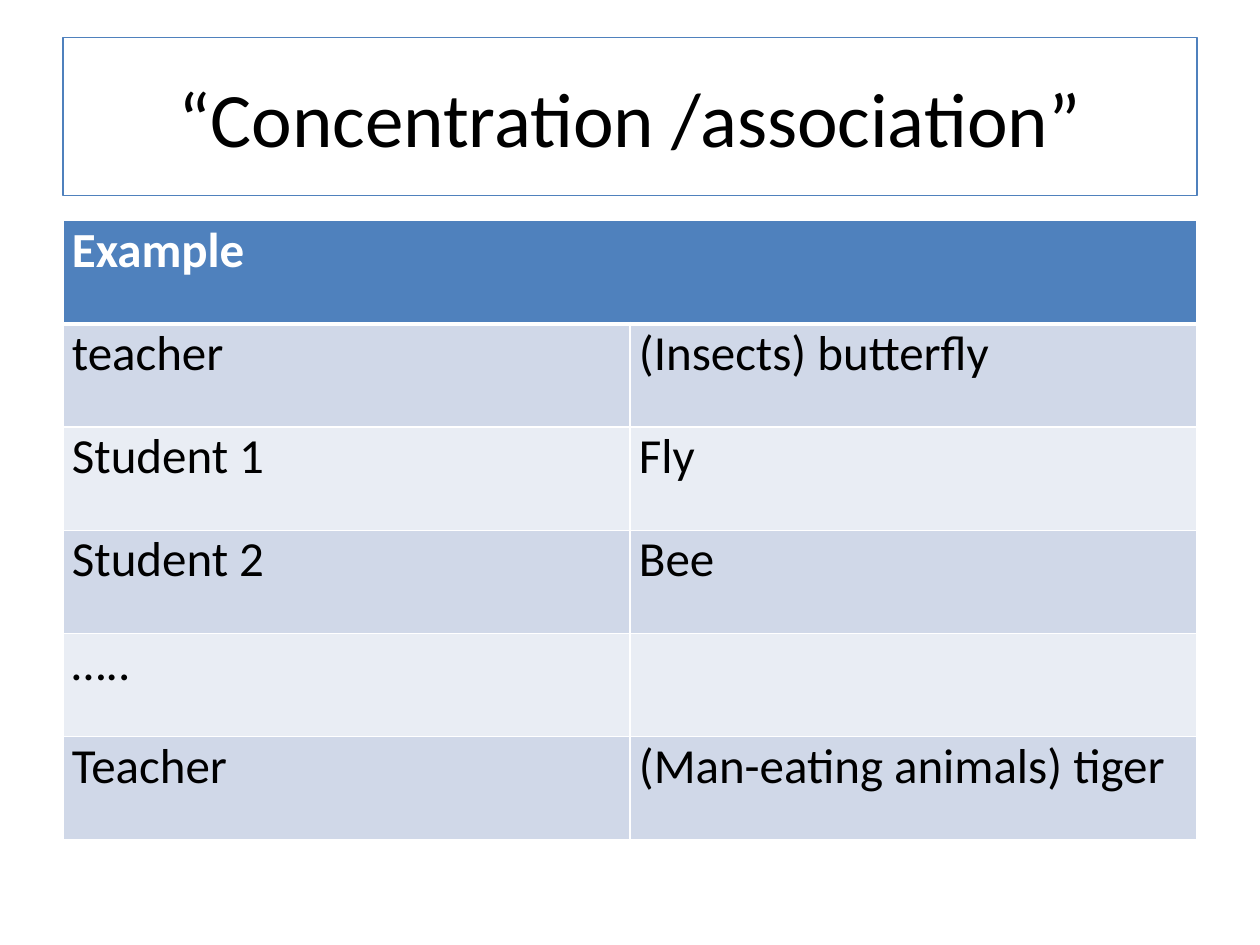
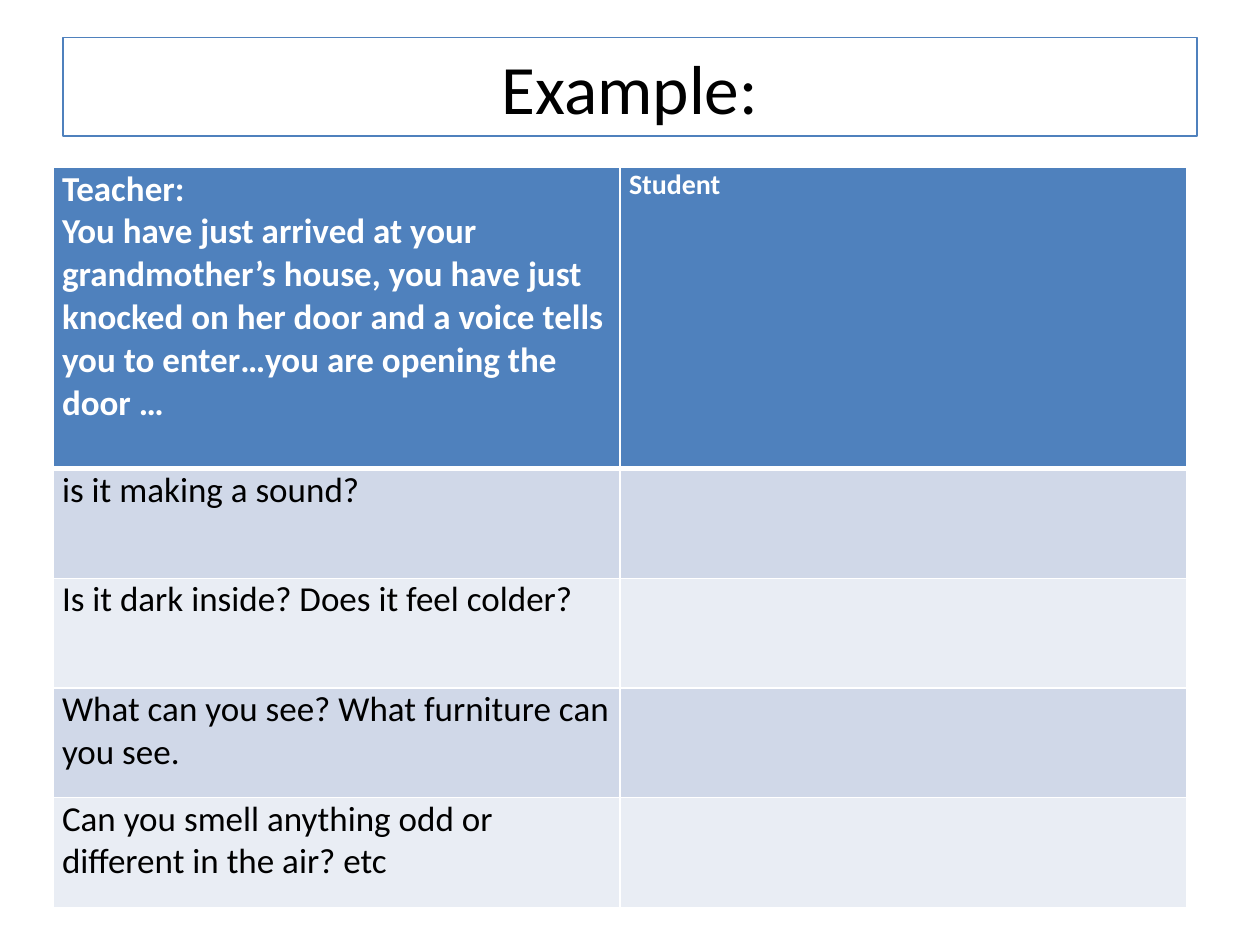
from dataclasses import dataclass

from lxml.etree import SubElement
from pptx import Presentation
from pptx.dml.color import RGBColor
from pptx.enum.text import MSO_ANCHOR as Anchor, MSO_AUTO_SIZE as AutoSize, PP_ALIGN as Align
from pptx.oxml.ns import qn
from pptx.util import Cm, Pt

FONT = "Calibri"
BLACK, WHITE, BLUE = "000000", "FFFFFF", "4F81BD"
BANDS = ("D0D8E8", "E9EDF4")
TITLE_LAYOUT = 5
CONTENT_LEFT, CONTENT_WIDTH = 1.27, 22.86
TITLE_TOP = 0.76
THIN_BORDER, HEADER_BORDER = 1, 3
CELL_FORMAT = {
    "margin_left": Cm(0.18),
    "margin_right": Cm(0.18),
    "margin_top": 0,
    "margin_bottom": 0,
    "vertical_anchor": Anchor.TOP,
}


@dataclass
class Entry:
    text: str
    size: float


@dataclass
class TableSlide:
    title: Entry
    title_height: float
    left: float
    top: float
    header_height: float
    row_height: float
    rows: list[list[Entry]]
    merge_header: bool = False


def big(text: str) -> Entry:
    return Entry(text, 28)


def question(text: str) -> list[Entry]:
    return [Entry(text, 20), Entry("", 20)]


SLIDES = [
    TableSlide(
        title=Entry("“Concentration /association”", 44),
        title_height=3.18,
        left=CONTENT_LEFT,
        top=4.45,
        header_height=2.08,
        row_height=2.08,
        merge_header=True,
        rows=[
            [big("Example"), big("")],
            [big("teacher"), big("(Insects) butterfly")],
            [big("Student 1"), big("Fly")],
            [big("Student 2"), big("Bee")],
            [big("….."), big("")],
            [big("Teacher"), big("(Man-eating animals) tiger")],
        ],
    ),
    TableSlide(
        title=Entry("Example:", 39.6),
        title_height=1.98,
        left=1.07,
        top=3.38,
        header_height=6.07,
        row_height=2.21,
        rows=[
            [
                Entry(
                    "Teacher:\nYou have just arrived at your grandmother’s house, "
                    "you have just knocked on her door and a voice tells you to "
                    "enter…you are opening the door …",
                    20,
                ),
                Entry("Student", 16),
            ],
            question("is it making a sound?"),
            question("Is it dark inside? Does it feel colder?"),
            question("What can you see? What furniture can you see."),
            question("Can you smell anything odd or different in the air? etc"),
        ],
    ),
]


def color(value: str) -> RGBColor:
    return RGBColor.from_string(value)


def apply_format(target, values: dict) -> None:
    for name, value in values.items():
        setattr(target, name, value)


def write_text(frame, entry: Entry, ink: str, bold: bool, align=Align.LEFT) -> None:
    frame.text = entry.text
    for para in frame.paragraphs:
        para.alignment = align
        apply_format(para.font, {"size": Pt(entry.size), "name": FONT})
        for span in para.runs:
            apply_format(span.font, {"size": Pt(entry.size), "name": FONT, "bold": bold})
            span.font.color.rgb = color(ink)


def add_title(page, item: TableSlide) -> None:
    box = page.shapes.title
    apply_format(box, {
        "left": Cm(CONTENT_LEFT),
        "top": Cm(TITLE_TOP),
        "width": Cm(CONTENT_WIDTH),
        "height": Cm(item.title_height),
    })
    box.line.color.rgb = color(BLUE)
    box.line.width = Pt(0.75)
    apply_format(box.text_frame, {
        "word_wrap": True,
        "auto_size": AutoSize.NONE,
        "vertical_anchor": Anchor.MIDDLE,
    })
    write_text(box.text_frame, item.title, BLACK, False, Align.CENTER)


def set_borders(cell, row_index: int) -> None:
    widths = {"L": THIN_BORDER, "R": THIN_BORDER, "T": THIN_BORDER, "B": THIN_BORDER}
    if row_index == 0:
        widths["B"] = HEADER_BORDER
    if row_index == 1:
        widths["T"] = HEADER_BORDER
    properties = cell._tc.get_or_add_tcPr()
    for side, width in widths.items():
        line = SubElement(properties, qn(f"a:ln{side}"), w=str(Pt(width)))
        fill = SubElement(line, qn("a:solidFill"))
        SubElement(fill, qn("a:srgbClr"), val=WHITE)


def add_table(page, item: TableSlide) -> None:
    row_count, column_count = len(item.rows), len(item.rows[0])
    height = item.header_height + item.row_height * (row_count - 1)
    table = page.shapes.add_table(
        row_count, column_count,
        Cm(item.left), Cm(item.top), Cm(CONTENT_WIDTH), Cm(height),
    ).table
    for row_index, entries in enumerate(item.rows):
        is_header = row_index == 0
        table.rows[row_index].height = Cm(item.header_height if is_header else item.row_height)
        background = BLUE if is_header else BANDS[(row_index - 1) % len(BANDS)]
        for column_index, entry in enumerate(entries):
            cell = table.cell(row_index, column_index)
            apply_format(cell, CELL_FORMAT)
            set_borders(cell, row_index)
            cell.fill.solid()
            cell.fill.fore_color.rgb = color(background)
            write_text(cell.text_frame, entry, WHITE if is_header else BLACK, is_header)
    if item.merge_header:
        table.cell(0, 0).merge(table.cell(0, column_count - 1))


def main() -> None:
    deck = Presentation()
    deck.slide_width, deck.slide_height = Cm(25.4), Cm(19.05)
    for item in SLIDES:
        page = deck.slides.add_slide(deck.slide_layouts[TITLE_LAYOUT])
        add_title(page, item)
        add_table(page, item)
    deck.save("out.pptx")


if __name__ == "__main__":
    main()
